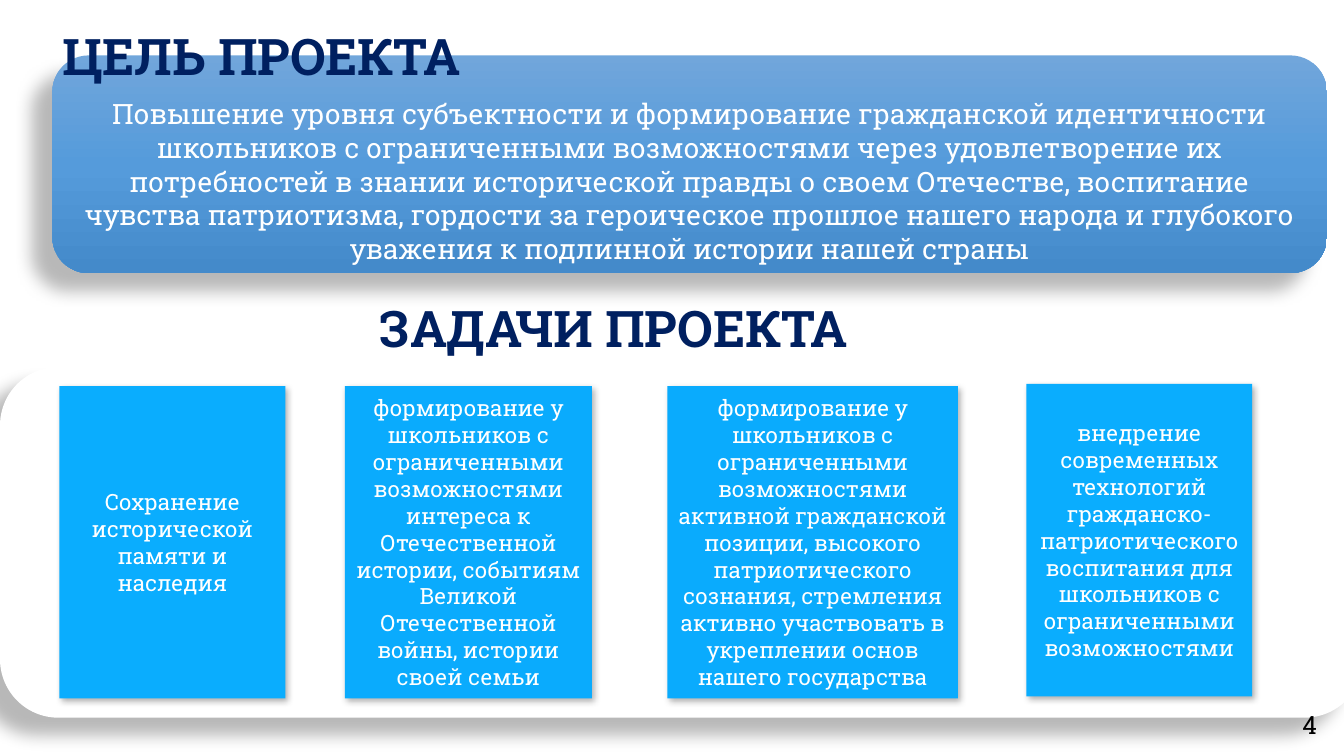
from copy import deepcopy
from lxml import etree
from pptx import Presentation
from pptx.dml.color import RGBColor
from pptx.enum.shapes import MSO_SHAPE
from pptx.enum.text import MSO_ANCHOR, MSO_AUTO_SIZE, PP_ALIGN
from pptx.oxml.ns import qn
from pptx.util import Inches, Pt

RECT, ROUND = MSO_SHAPE.RECTANGLE, MSO_SHAPE.ROUNDED_RECTANGLE
MIDDLE, GROW = MSO_ANCHOR.MIDDLE, MSO_AUTO_SIZE.SHAPE_TO_FIT_TEXT
LEFT, CENTER = PP_ALIGN.LEFT, PP_ALIGN.CENTER

THEME = {
    "font": "Roboto Slab",
    "white": "FFFFFF",
    "black": "000000",
    "navy": "002060",
    "sky": "0AADFE",
    "azure": "0AABFD",
    "blend": ["71A6DB", "559BDB", "448ACA"],
    "head": 36,
    "goal": 20,
    "page": 18,
    "card": 16,
}
DEEP = (28, 11.8, 19.7, 141)
SOFT = (30, 4.5, 2.6, 53)


def add_panel(kind, box, fill, shade):
    panel = slide.shapes.add_shape(kind, *map(Inches, box))
    panel.fill.solid()
    panel.fill.fore_color.rgb = RGBColor.from_string(fill)
    panel.line.fill.background()
    panel.shadow.inherit = False
    alpha, blur, dist, angle = shade
    effects = panel._element.spPr.find(qn("a:effectLst"))
    outer = etree.SubElement(
        effects, qn("a:outerShdw"), blurRad=str(Pt(blur)), dist=str(Pt(dist)),
        dir=str(angle * 60000), algn="ctr", rotWithShape="0")
    tint = etree.SubElement(outer, qn("a:srgbClr"), val=THEME["black"])
    etree.SubElement(tint, qn("a:alpha"), val=str(alpha * 1000))
    return panel


def set_text(shape, text, size, color, align, bold=False):
    frame = shape.text_frame
    frame.word_wrap = True
    frame.text = text
    line = frame.paragraphs[0]
    line.alignment = align
    font = line.runs[0].font
    font.name = THEME["font"]
    font.size = Pt(THEME[size])
    font.bold = bold
    font.color.rgb = RGBColor.from_string(THEME[color])


deck = Presentation()
deck.slide_width, deck.slide_height = Inches(13.33), Inches(7.5)
slide = deck.slides.add_slide(deck.slide_layouts[6])

add_panel(ROUND, (0, 3.64, 13.52, 3.48), THEME["white"], DEEP)

goal = add_panel(ROUND, (0.52, 0.55, 12.64, 2.16), THEME["blend"][0], DEEP)
goal.fill.gradient()
goal.fill.gradient_angle = 270
stops = goal._element.spPr.find(".//" + qn("a:gsLst"))
stops.insert(1, deepcopy(stops[0]))
for i, stop in enumerate(goal.fill.gradient_stops):
    stop.color.rgb = RGBColor.from_string(THEME["blend"][i])
    stop.position = i / 2
set_text(
    goal,
    "Повышение уровня субъектности и формирование гражданской идентичности "
    "школьников с ограниченными возможностями через удовлетворение их "
    "потребностей в знании исторической правды о своем Отечестве, воспитание "
    "чувства патриотизма, гордости за героическое прошлое нашего народа и "
    "глубокого уважения к подлинной истории нашей страны",
    "goal", "white", CENTER)
goal.text_frame.vertical_anchor = MIDDLE
goal.text_frame.margin_top = Inches(0.33)
goal.text_frame.margin_bottom = 0

cards = [
    (0.59, 3.83, 2.24, "sky", "Сохранение исторической памяти и наследия"),
    (3.42, 3.83, 2.45, "azure",
     "формирование у школьников с ограниченными возможностями интереса к "
     "Отечественной истории, событиям Великой Отечественной войны, истории "
     "своей семьи"),
    (6.62, 3.83, 2.88, "azure",
     "формирование у школьников с ограниченными возможностями активной "
     "гражданской позиции, высокого патриотического сознания, стремления "
     "активно участвовать в укреплении основ нашего государства"),
    (10.18, 3.81, 2.24, "sky",
     "внедрение современных технологий гражданско-патриотического воспитания "
     "для школьников с ограниченными возможностями"),
]
for left, top, width, fill, text in cards:
    card = add_panel(RECT, (left, top, width, 3.1), THEME[fill], SOFT)
    set_text(card, text, "card", "white", CENTER)
    card.text_frame.vertical_anchor = MIDDLE

labels = [
    ((0.52, 0.2, 10.31, 0.71), "ЦЕЛЬ ПРОЕКТА", "head", "navy", True),
    ((3.67, 2.9, 10.31, 0.71), "ЗАДАЧИ ПРОЕКТА", "head", "navy", True),
    ((12.82, 6.99, 0.34, 0.4), "4", "page", "black", False),
]
for box, text, size, color, bold in labels:
    label = slide.shapes.add_textbox(*map(Inches, box))
    set_text(label, text, size, color, LEFT, bold)
    label.text_frame.auto_size = GROW

deck.save("out.pptx")
